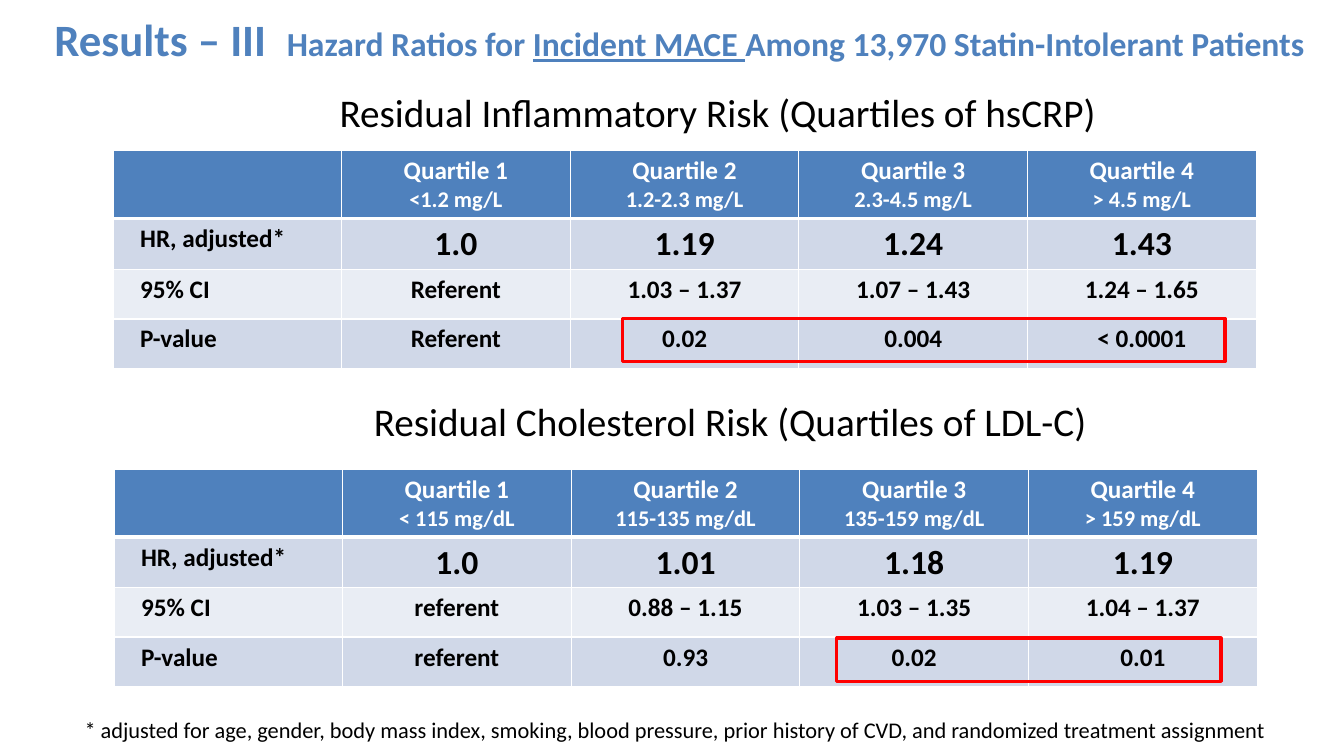
from dataclasses import dataclass

from lxml import etree
from pptx import Presentation
from pptx.dml.color import RGBColor
from pptx.enum.shapes import MSO_SHAPE
from pptx.enum.text import MSO_AUTO_SIZE, PP_ALIGN
from pptx.oxml.ns import qn
from pptx.util import Inches, Pt

RECT = MSO_SHAPE.RECTANGLE
GROW = MSO_AUTO_SIZE.SHAPE_TO_FIT_TEXT
LEFT, CENTER = PP_ALIGN.LEFT, PP_ALIGN.CENTER


@dataclass(frozen=True)
class Theme:
    font: str = "Calibri"
    blue: str = "4F81BD"
    dark_band: str = "D0D8E8"
    light_band: str = "E9EDF4"
    white: str = "FFFFFF"
    black: str = "000000"
    red: str = "FF0000"
    title: int = 32
    heading: int = 28
    large: int = 24
    body: int = 18
    small: int = 16


T = Theme()

HSCRP = [
    ["", "Quartile 1\n<1.2 mg/L", "Quartile 2\n1.2-2.3 mg/L",
     "Quartile 3\n2.3-4.5 mg/L", "Quartile 4\n> 4.5 mg/L"],
    ["HR, adjusted*", "1.0", "1.19", "1.24", "1.43"],
    ["95% CI", "Referent", "1.03 – 1.37", "1.07 – 1.43", "1.24 – 1.65"],
    ["P-value", "Referent", "0.02", "0.004", "< 0.0001"],
]
LDL = [
    ["", "Quartile 1\n< 115 mg/dL", "Quartile 2\n115-135 mg/dL",
     "Quartile 3\n135-159 mg/dL", "Quartile 4\n> 159 mg/dL"],
    ["HR, adjusted*", "1.0", "1.01", "1.18", "1.19"],
    ["95% CI", "referent", "0.88 – 1.15", "1.03 – 1.35", "1.04 – 1.37"],
    ["P-value", "referent", "0.93", "0.02", "0.01"],
]


def style(r, size, color, bold=False):
    r.font.name = T.font
    r.font.size = Pt(size)
    r.font.bold = bold
    r.font.color.rgb = RGBColor.from_string(color)


def add_text(s, x, y, w, h, runs, wrap=True):
    """Place one line of (text, size, color, bold, underline) runs."""
    tf = s.shapes.add_textbox(Inches(x), Inches(y), Inches(w), Inches(h)).text_frame
    tf.word_wrap = wrap
    tf.auto_size = GROW
    for text, size, color, bold, underline in runs:
        r = tf.paragraphs[0].add_run()
        r.text = text
        style(r, size, color, bold)
        r.font.underline = underline


def set_borders(cell, top, bottom):
    tcPr = cell._tc.get_or_add_tcPr()
    for tag, width in (("lnL", 1), ("lnR", 1), ("lnT", top), ("lnB", bottom)):
        ln = etree.SubElement(tcPr, qn("a:" + tag), w=str(Pt(width)))
        fill = etree.SubElement(ln, qn("a:solidFill"))
        etree.SubElement(fill, qn("a:srgbClr"), val=T.white)


def fill_cell(cell, text, row, col):
    header = row == 0
    set_borders(cell, 3 if row == 1 else 1, 3 if header else 1)
    cell.fill.solid()
    band = T.blue if header else T.dark_band if row % 2 else T.light_band
    cell.fill.fore_color.rgb = RGBColor.from_string(band)
    if col == 0:
        cell.margin_left = Inches(0.27)
    cell.text_frame.text = text
    for line, p in enumerate(cell.text_frame.paragraphs):
        p.alignment = CENTER if col else LEFT
        size = T.large if row == 1 and col else T.small if line else T.body
        for r in p.runs:
            style(r, size, T.white if header else T.black, True)


def add_risk_table(s, x, y, w, rows):
    heights = [0.67] + [0.49] * (len(rows) - 1)
    table = s.shapes.add_table(len(rows), len(rows[0]), Inches(x), Inches(y),
                               Inches(w), Inches(sum(heights))).table
    table.horz_banding = False
    for column in table.columns:
        column.width = Inches(w / len(rows[0]))
    for i, values in enumerate(rows):
        table.rows[i].height = Inches(heights[i])
        for j, text in enumerate(values):
            fill_cell(table.cell(i, j), text, i, j)


def add_highlight(s, x, y, w, h):
    sp = s.shapes.add_shape(RECT, Inches(x), Inches(y), Inches(w), Inches(h))
    sp.shadow.inherit = False
    sp.fill.background()
    sp.line.color.rgb = RGBColor.from_string(T.red)
    sp.line.width = Pt(2.25)


def add_risk_panel(s, x, y, w, heading, heading_box, rows, mark_x, mark_w):
    """Heading, table and framed p-values, offset from the table's corner."""
    dx, dy, heading_w = heading_box
    add_risk_table(s, x, y, w, rows)
    add_text(s, x + dx, y + dy, heading_w, 0.57,
             [(heading, T.heading, T.black, False, False)])
    add_highlight(s, x + mark_x, y + 1.67, mark_w, 0.43)


def add_title(s, x, y, w, h):
    add_text(s, x, y, w, h, [
        ("Results – III  ", T.title, T.blue, True, False),
        ("Hazard Ratios for ", T.large, T.blue, True, False),
        ("Incident MACE ", T.large, T.blue, True, True),
        ("Among 13,970 Statin-Intolerant Patients", T.large, T.blue, True, False),
    ], wrap=False)


def add_footnote(s, x, y, w, h):
    note = ("* adjusted for age, gender, body mass index, smoking, blood pressure, "
            "prior history of CVD, and randomized treatment assignment")
    add_text(s, x, y, w, h, [(note, T.small, T.black, False, False)])


def main():
    prs = Presentation()
    prs.slide_width, prs.slide_height = Inches(13.33), Inches(7.5)
    s = prs.slides.add_slide(prs.slide_layouts[6])

    add_risk_panel(s, 1.12, 1.49, 11.34,
                   "Residual Inflammatory Risk (Quartiles of hsCRP)",
                   (2.15, -0.66, 8.06), HSCRP, 5.05, 5.98)
    add_risk_panel(s, 1.13, 4.66, 11.34,
                   "Residual Cholesterol Risk (Quartiles of LDL-C)",
                   (2.48, -0.77, 8.4), LDL, 7.17, 3.81)
    add_footnote(s, 0.74, 7.06, 12.5, 0.37)
    add_title(s, 0.44, 0.07, 13.15, 0.64)
    prs.save("out.pptx")


if __name__ == "__main__":
    main()
